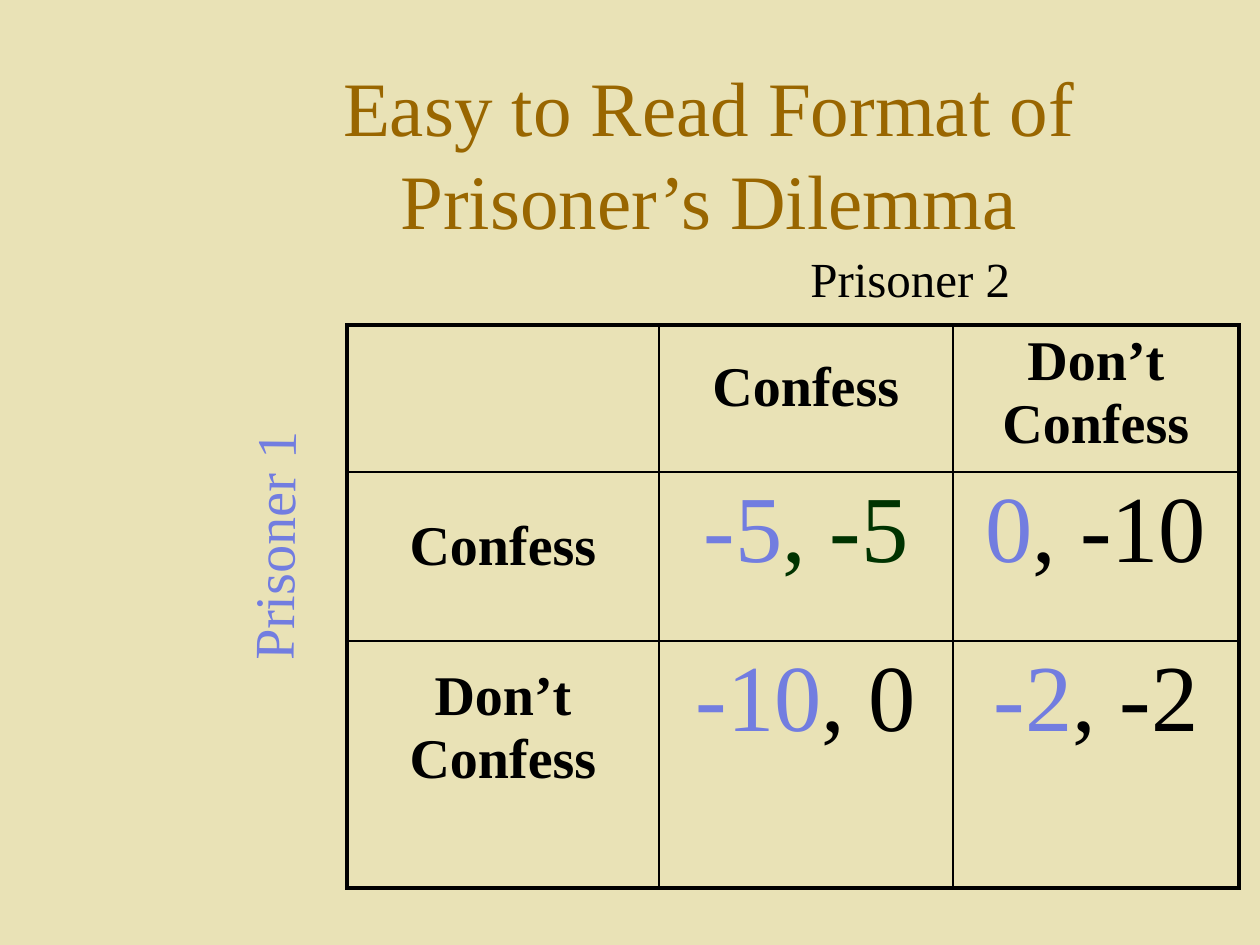
import pptx
import pptx.dml.color
import pptx.enum.text
import pptx.oxml
import pptx.oxml.ns
import pptx.util

EMU_PER_PX = 914400 // 126
FONT = "Times New Roman"
CREAM = pptx.dml.color.RGBColor(0xE9, 0xE2, 0xB6)
BROWN = pptx.dml.color.RGBColor(0x99, 0x66, 0x00)
BLUE = pptx.dml.color.RGBColor(0x72, 0x7D, 0xE0)
GREEN = pptx.dml.color.RGBColor(0x00, 0x33, 0x00)
BLACK = pptx.dml.color.RGBColor(0x00, 0x00, 0x00)

COLUMN_WIDTHS = [312, 294, 286]
ROW_HEIGHTS = [147, 169, 247]
HEADINGS = [
    (0, 1, "Confess", 32),
    (0, 2, "Don’t Confess", 6),
    (1, 0, "Confess", 44),
    (2, 0, "Don’t Confess", 25),
]
PAYOFFS = [
    (1, 1, "-5", "-5", GREEN),
    (1, 2, "0", "-10", BLACK),
    (2, 1, "-10", "0", BLACK),
    (2, 2, "-2", "-2", BLACK),
]


def px(length):
    return pptx.util.Emu(length * EMU_PER_PX)


def style(font, size, color, bold=False):
    font.name = FONT
    font.size = pptx.util.Pt(size)
    font.bold = bold
    font.color.rgb = color


def add_label(slide, box, text, size, color, align, anchor, rotation=0):
    label = slide.shapes.add_textbox(*map(px, box))
    label.rotation = rotation
    frame = label.text_frame
    frame.word_wrap = True
    frame.vertical_anchor = anchor
    paragraph = frame.paragraphs[0]
    paragraph.text = text
    paragraph.alignment = align
    style(paragraph.font, size, color)


def set_borders(cell, row, column):
    outer_sides = {
        "L": column == 0,
        "R": column == len(COLUMN_WIDTHS) - 1,
        "T": row == 0,
        "B": row == len(ROW_HEIGHTS) - 1,
    }
    properties = cell._tc.get_or_add_tcPr()
    for side, outer in outer_sides.items():
        width = pptx.util.Pt(2.25 if outer else 1)
        properties.append(pptx.oxml.parse_xml(
            f'<a:ln{side} {pptx.oxml.ns.nsdecls("a")} w="{width}">'
            f'<a:solidFill><a:srgbClr val="{BLACK}"/></a:solidFill></a:ln{side}>'))


def add_payoff_table(slide):
    table = slide.shapes.add_table(
        len(ROW_HEIGHTS), len(COLUMN_WIDTHS), px(347), px(325),
        px(sum(COLUMN_WIDTHS)), px(sum(ROW_HEIGHTS))).table
    table.first_row = False
    table.horz_banding = False
    for column, width in zip(table.columns, COLUMN_WIDTHS):
        column.width = px(width)
    for row, height in zip(table.rows, ROW_HEIGHTS):
        row.height = px(height)
    for row in range(len(ROW_HEIGHTS)):
        for column in range(len(COLUMN_WIDTHS)):
            cell = table.cell(row, column)
            set_borders(cell, row, column)
            if row and column:
                cell.fill.solid()
                cell.fill.fore_color.rgb = CREAM
            else:
                cell.fill.background()
            cell.text_frame.paragraphs[0].alignment = pptx.enum.text.PP_ALIGN.CENTER
    return table


def fill_heading(cell, text, top_inset):
    cell.margin_top = px(top_inset)
    paragraph = cell.text_frame.paragraphs[0]
    paragraph.text = text
    style(paragraph.font, 32, BLACK, bold=True)


def fill_payoff(cell, first, second, second_color):
    paragraph = cell.text_frame.paragraphs[0]
    for text, color in ((first, BLUE), (f", {second}", second_color)):
        run = paragraph.add_run()
        run.text = text
        style(run.font, 54, color)


def main():
    presentation = pptx.Presentation()
    presentation.slide_width = px(1260)
    presentation.slide_height = px(945)
    slide = presentation.slides.add_slide(presentation.slide_layouts[6])
    slide.background.fill.solid()
    slide.background.fill.fore_color.rgb = CREAM

    align = pptx.enum.text.PP_ALIGN
    anchor = pptx.enum.text.MSO_ANCHOR
    add_label(slide, (189, 73, 1040, 158), "Easy to Read Format of Prisoner’s Dilemma",
              44, BROWN, align.CENTER, anchor.MIDDLE)
    add_label(slide, (798, 242, 233, 72), "Prisoner 2", 28, BLACK, align.LEFT, anchor.TOP)
    add_label(slide, (140, 501, 265, 79), "Prisoner 1", 32, BLUE, align.LEFT, anchor.MIDDLE,
              rotation=270.6)

    table = add_payoff_table(slide)
    for row, column, text, top_inset in HEADINGS:
        fill_heading(table.cell(row, column), text, top_inset)
    for row, column, first, second, second_color in PAYOFFS:
        fill_payoff(table.cell(row, column), first, second, second_color)

    presentation.save("out.pptx")


if __name__ == "__main__":
    main()
